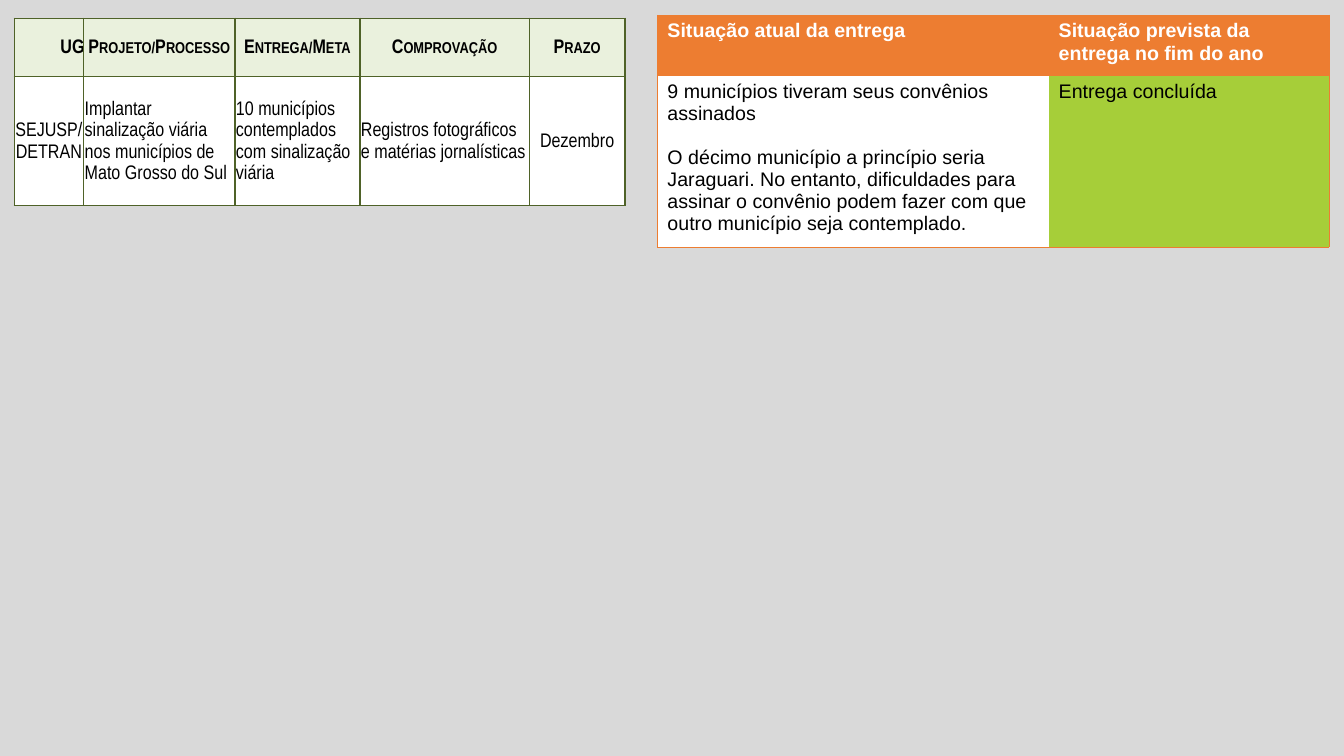
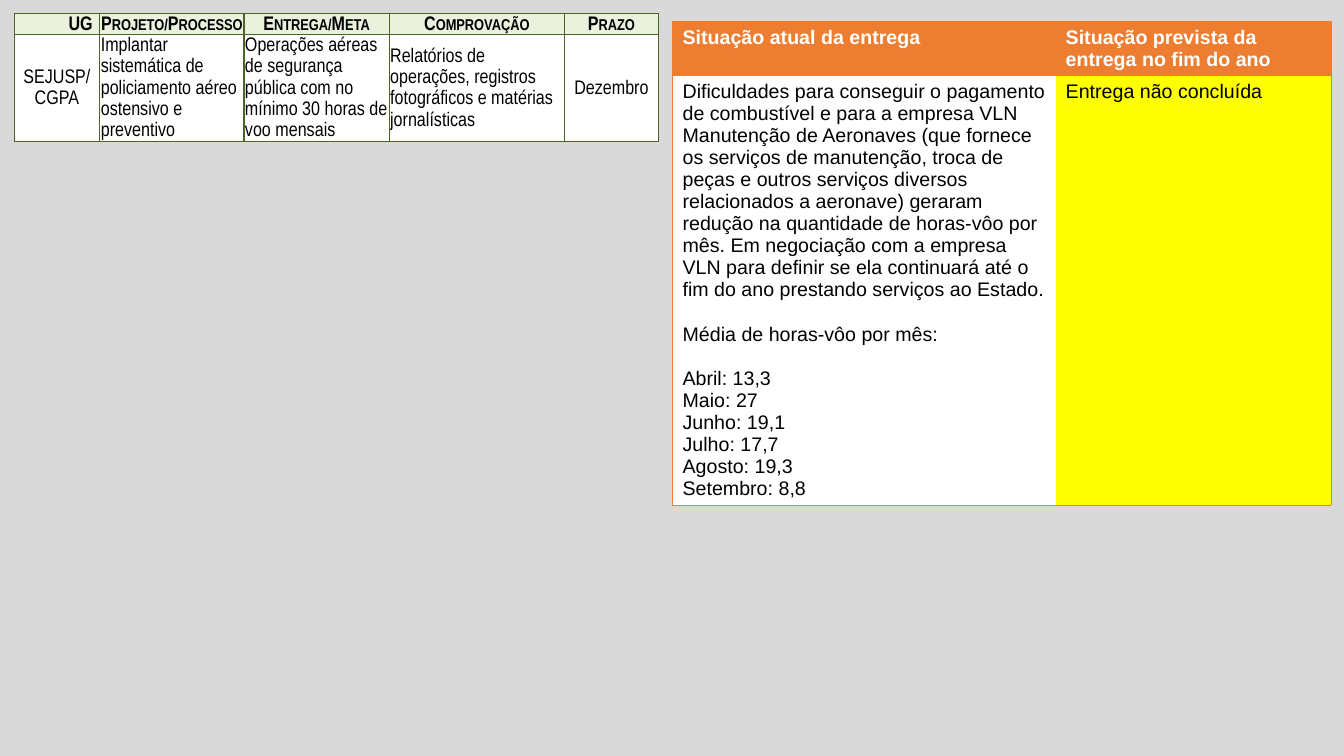
from dataclasses import dataclass

from lxml.etree import SubElement
from pptx import Presentation
from pptx.dml.color import RGBColor
from pptx.enum.text import MSO_ANCHOR, PP_ALIGN
from pptx.oxml.ns import qn
from pptx.slide import Slide
from pptx.table import Table, _Cell
from pptx.util import Inches, Pt

# Shared look
BACKDROP = RGBColor(0xD9, 0xD9, 0xD9)
WHITE = RGBColor(0xFF, 0xFF, 0xFF)
BLACK = RGBColor(0x00, 0x00, 0x00)
OLIVE = RGBColor(0x4F, 0x62, 0x28)
PALE_GREEN = RGBColor(0xEA, 0xF1, 0xDD)
ORANGE = RGBColor(0xED, 0x7D, 0x31)
DONE_GREEN = RGBColor(0xA6, 0xCE, 0x39)
ALERT_YELLOW = RGBColor(0xFF, 0xFF, 0x00)

TEXT_SIZE = Pt(14)
BLOCK_GAP = Pt(16)
UG_INDENT = Inches(0.23)
NO_STYLE = "{2D5ABB26-0587-4C30-8999-92F81FD0307C}"
SIDES = "LRTB"

GOAL_HEADS = ("UG", "Projeto/Processo", "Entrega/Meta", "Comprovação", "Prazo")
GOAL_CENTRED = (0, 4)
STATUS_HEADS = ("Situação atual da entrega",
                "Situação prevista da entrega no fim do ano")


@dataclass(frozen=True)
class Grid:
    left: float
    top: float
    cols: tuple[float, ...]
    rows: tuple[float, ...]


@dataclass(frozen=True)
class Report:
    goal_grid: Grid
    goal: tuple[str, ...]
    status_grid: Grid
    status: tuple[str, ...]  # blocks set apart by a gap; newline starts a paragraph
    forecast: str
    forecast_fill: RGBColor


REPORTS = (
    Report(
        Grid(0.14, 0.18, (0.69, 1.5, 1.24, 1.68, 0.95), (0.58, 1.28)),
        ("SEJUSP/ DETRAN",
         "Implantar sinalização viária nos municípios de Mato Grosso do Sul",
         "10 municípios contemplados com sinalização viária",
         "Registros fotográficos e matérias jornalísticas",
         "Dezembro"),
        Grid(6.52, 0.15, (3.88, 2.78), (0.6, 1.7)),
        ("9 municípios tiveram seus convênios assinados",
         "O décimo município a princípio seria Jaraguari. No entanto, "
         "dificuldades para assinar o convênio podem fazer com que outro "
         "município seja contemplado."),
        "Entrega concluída", DONE_GREEN),
    Report(
        Grid(0.14, 0.13, (0.85, 1.43, 1.44, 1.74, 0.93), (0.21, 1.06)),
        ("SEJUSP/\nCGPA",
         "Implantar sistemática de policiamento aéreo ostensivo e preventivo",
         "Operações aéreas de segurança pública com no mínimo 30 horas de voo mensais",
         "Relatórios de operações, registros fotográficos e matérias jornalísticas",
         "Dezembro"),
        Grid(6.67, 0.21, (3.8, 2.73), (0.54, 4.25)),
        ("Dificuldades para conseguir o pagamento de combustível e para a "
         "empresa VLN Manutenção de Aeronaves (que fornece os serviços de "
         "manutenção, troca de peças e outros serviços diversos relacionados "
         "a aeronave) geraram redução na quantidade de horas-vôo por mês. Em "
         "negociação com a empresa VLN para definir se ela continuará até o "
         "fim do ano prestando serviços ao Estado.",
         "Média de horas-vôo por mês:",
         "Abril: 13,3\nMaio: 27\nJunho: 19,1\nJulho: 17,7\nAgosto: 19,3\nSetembro: 8,8"),
        "Entrega não concluída", ALERT_YELLOW),
)


def write(cell: _Cell, *blocks: str, font: str = "Arial", color: RGBColor = BLACK,
          bold: bool = False, small_caps: bool = False,
          align: PP_ALIGN = PP_ALIGN.LEFT, spacing: float = 1.0,
          indent: int = 0) -> None:
    """Write blocks of paragraphs, with a gap before each block but the first."""
    tf = cell.text_frame
    tf.text = "\n".join(blocks)
    starts = [i == 0 for block in blocks for i in range(len(block.split("\n")))]
    for i, p in enumerate(tf.paragraphs):
        p.alignment = align
        p.line_spacing = spacing
        if i and starts[i]:
            p.space_before = BLOCK_GAP
        if indent:
            p._p.get_or_add_pPr().set("indent", str(indent))
        r = p.runs[0]
        r.font.name, r.font.size = font, TEXT_SIZE
        r.font.bold, r.font.color.rgb = bold, color
        if small_caps:
            r._r.get_or_add_rPr().set("cap", "small")


def paint(cell: _Cell, fill: RGBColor, line: RGBColor, width: float,
          sides: str = SIDES) -> None:
    """Set the borders on the given sides, then the fill."""
    tc_pr = cell._tc.get_or_add_tcPr()
    for side in SIDES:
        ln = SubElement(tc_pr, qn(f"a:ln{side}"), w=str(Pt(width)))
        if side in sides:
            solid = SubElement(ln, qn("a:solidFill"))
            SubElement(solid, qn("a:srgbClr"), val=str(line))
        else:
            SubElement(ln, qn("a:noFill"))
    cell.fill.solid()
    cell.fill.fore_color.rgb = fill


def add_grid(s: Slide, grid: Grid) -> Table:
    table = s.shapes.add_table(
        len(grid.rows), len(grid.cols), Inches(grid.left), Inches(grid.top),
        Inches(sum(grid.cols)), Inches(sum(grid.rows))).table
    table.horz_banding = False
    table._tbl.tblPr.find(qn("a:tableStyleId")).text = NO_STYLE
    for col, width in zip(table.columns, grid.cols):
        col.width = Inches(width)
    for row, height in zip(table.rows, grid.rows):
        row.height = Inches(height)
    return table


def add_goal(s: Slide, report: Report) -> None:
    table = add_grid(s, report.goal_grid)
    for i, texts in enumerate((GOAL_HEADS, report.goal)):
        head = i == 0
        for j, text in enumerate(texts):
            cell = table.cell(i, j)
            cell.vertical_anchor = MSO_ANCHOR.MIDDLE
            cell.margin_left = cell.margin_right = Inches(0.01)
            cell.margin_top = cell.margin_bottom = 0
            centred = head or j in GOAL_CENTRED
            write(cell, text, font="Arial Narrow", bold=head, small_caps=head,
                  align=PP_ALIGN.CENTER if centred else PP_ALIGN.LEFT,
                  spacing=1.15, indent=UG_INDENT if head and j == 0 else 0)
            paint(cell, PALE_GREEN if head else WHITE, OLIVE, 1)


def add_status(s: Slide, report: Report) -> None:
    table = add_grid(s, report.status_grid)
    fills = (WHITE, report.forecast_fill)
    bodies = (report.status, (report.forecast,))
    for j, side in enumerate("LR"):
        head, body = table.cell(0, j), table.cell(1, j)
        write(head, STATUS_HEADS[j], color=WHITE, bold=True)
        paint(head, ORANGE, ORANGE, 0.5, side + "TB")
        write(body, *bodies[j])
        paint(body, fills[j], ORANGE, 0.5, side + "TB")


def main() -> None:
    prs = Presentation()
    prs.slide_width, prs.slide_height = Inches(13.33), Inches(7.5)

    # Grey backdrop for every slide
    backdrop = prs.slide_master.background.fill
    backdrop.solid()
    backdrop.fore_color.rgb = BACKDROP

    # One slide per report: goal on the left, status on the right
    for report in REPORTS:
        s = prs.slides.add_slide(prs.slide_layouts[6])
        add_goal(s, report)
        add_status(s, report)
    prs.save("out.pptx")


if __name__ == "__main__":
    main()
